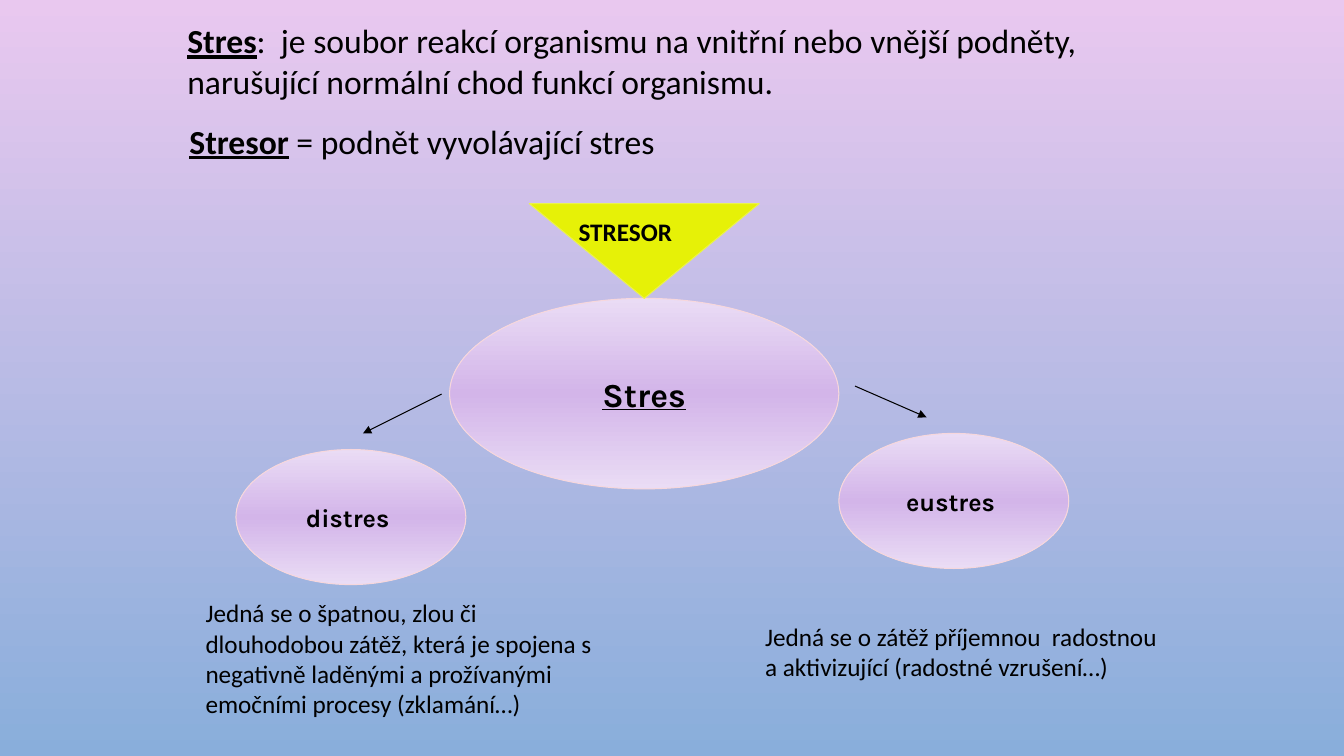
from copy import deepcopy

from lxml import etree
from pptx import Presentation
from pptx.dml.color import RGBColor
from pptx.enum.shapes import MSO_CONNECTOR, MSO_SHAPE
from pptx.enum.text import MSO_ANCHOR, MSO_AUTO_SIZE, PP_ALIGN
from pptx.oxml.ns import qn
from pptx.util import Inches, Pt

BLACK = RGBColor(0x00, 0x00, 0x00)
PINK = RGBColor(0xE9, 0xC8, 0xEF)
BLUE = RGBColor(0x89, 0xAE, 0xDB)
PALE_LILAC = RGBColor(0xEA, 0xDC, 0xF5)
LILAC = RGBColor(0xD3, 0xB5, 0xE9)
ROSE = RGBColor(0xF7, 0xD7, 0xDC)
YELLOW = RGBColor(0xE6, 0xF1, 0x07)
LIGHT_YELLOW = RGBColor(0xEB, 0xF3, 0x4B)


def set_gradient(fill, element, colours):
    """Fill from top to bottom with evenly spaced colours."""
    fill.gradient()
    fill.gradient_angle = 270
    stop_list = element.find(".//" + qn("a:gsLst"))
    while len(stop_list) < len(colours):
        stop_list.append(deepcopy(stop_list[-1]))
    for index, (stop, colour) in enumerate(zip(fill.gradient_stops, colours)):
        stop.position = index / (len(colours) - 1)
        stop.color.rgb = colour


def set_font(font, size, name="Calibri", bold=False, underline=False):
    font.name = name
    font.size = Pt(size)
    font.bold = bold
    font.underline = underline
    font.color.rgb = BLACK


def add_text(page, left, top, width, height, text, size, term="", bold=False, wrap=True):
    """Place a text box, with an optional underlined term in front."""
    box = page.shapes.add_textbox(Inches(left), Inches(top), Inches(width), Inches(height))
    frame = box.text_frame
    frame.word_wrap = wrap
    frame.auto_size = MSO_AUTO_SIZE.SHAPE_TO_FIT_TEXT
    para = frame.paragraphs[0]
    if term:
        span = para.add_run()
        span.text = term
        span.font.bold = True
        span.font.underline = True
    para.add_run().text = text
    set_font(para.font, size, bold=bold)


def add_outlined(page, kind, left, top, width, height, line_colour):
    shape = page.shapes.add_shape(kind, Inches(left), Inches(top), Inches(width), Inches(height))
    shape.shadow.inherit = False
    shape.line.color.rgb = line_colour
    shape.line.width = Pt(0.75)
    return shape


def add_bubble(page, left, top, width, height, text, size, underline=False):
    bubble = add_outlined(page, MSO_SHAPE.OVAL, left, top, width, height, ROSE)
    set_gradient(bubble.fill, bubble.element, [PALE_LILAC, LILAC, PALE_LILAC])
    frame = bubble.text_frame
    frame.word_wrap = False
    frame.vertical_anchor = MSO_ANCHOR.MIDDLE
    para = frame.paragraphs[0]
    para.text = text
    para.alignment = PP_ALIGN.CENTER
    set_font(para.font, size, "Karla", bold=True, underline=underline)


def add_arrow(page, start, end):
    ends = [Inches(value) for value in (*start, *end)]
    arrow = page.shapes.add_connector(MSO_CONNECTOR.STRAIGHT, *ends)
    arrow.line.color.rgb = BLACK
    arrow.line.width = Pt(0.75)
    etree.SubElement(arrow.line._get_or_add_ln(), qn("a:tailEnd"), type="triangle")
    etree.SubElement(arrow.element.spPr, qn("a:effectLst"))


def add_definitions(page, left, top):
    add_text(page, left, top, 9.9, 0.91,
             ":  je soubor reakcí organismu na vnitřní nebo vnější podněty, "
             "narušující normální chod funkcí organismu.", 24, term="Stres")
    add_text(page, left + 0.02, top + 1, 4.85, 0.5,
             " = podnět vyvolávající stres", 24, term="Stresor", wrap=False)


def add_stressor(page, left, top):
    triangle = add_outlined(page, MSO_SHAPE.ISOSCELES_TRIANGLE, left, top, 2.28, 0.94, LIGHT_YELLOW)
    triangle.rotation = 180
    triangle.fill.solid()
    triangle.fill.fore_color.rgb = YELLOW
    add_text(page, left + 0.39, top + 0.08, 1.17, 0.4, "STRESOR", 18, bold=True, wrap=False)


def add_stress_type(page, left, top, name, text, text_left, text_top, text_height):
    add_bubble(page, left, top, 2.28, 1.34, name, 18)
    add_text(page, text_left, text_top, 4.17, text_height, text, 18)


def build_stress_slide(deck):
    page = deck.slides.add_slide(deck.slide_layouts[6])
    set_gradient(page.background.fill, page.element, [PINK, BLUE])
    add_definitions(page, 1.76, 0.15)

    # Stress and its two kinds
    add_bubble(page, 4.46, 2.96, 3.86, 1.89, "Stres", 24, underline=True)
    add_stress_type(page, 2.34, 4.46, "distres ",
                    "Jedná se o špatnou, zlou či dlouhodobou zátěž, která je spojena s "
                    "negativně laděnými a prožívanými emočními procesy (zklamání…)",
                    1.94, 5.88, 1.31)
    add_stress_type(page, 8.32, 4.3, "eustres ",
                    "Jedná se o zátěž příjemnou  radostnou a aktivizující "
                    "(radostné vzrušení…)", 7.49, 6.11, 0.71)
    add_arrow(page, (4.38, 3.91), (3.6, 4.3))
    add_arrow(page, (8.48, 3.83), (9.19, 4.14))

    # Stressor pointing down at stress
    add_stressor(page, 5.25, 2.02)


def main():
    deck = Presentation()
    deck.slide_width = Inches(13.33)
    deck.slide_height = Inches(7.5)
    build_stress_slide(deck)
    deck.save("out.pptx")


if __name__ == "__main__":
    main()
